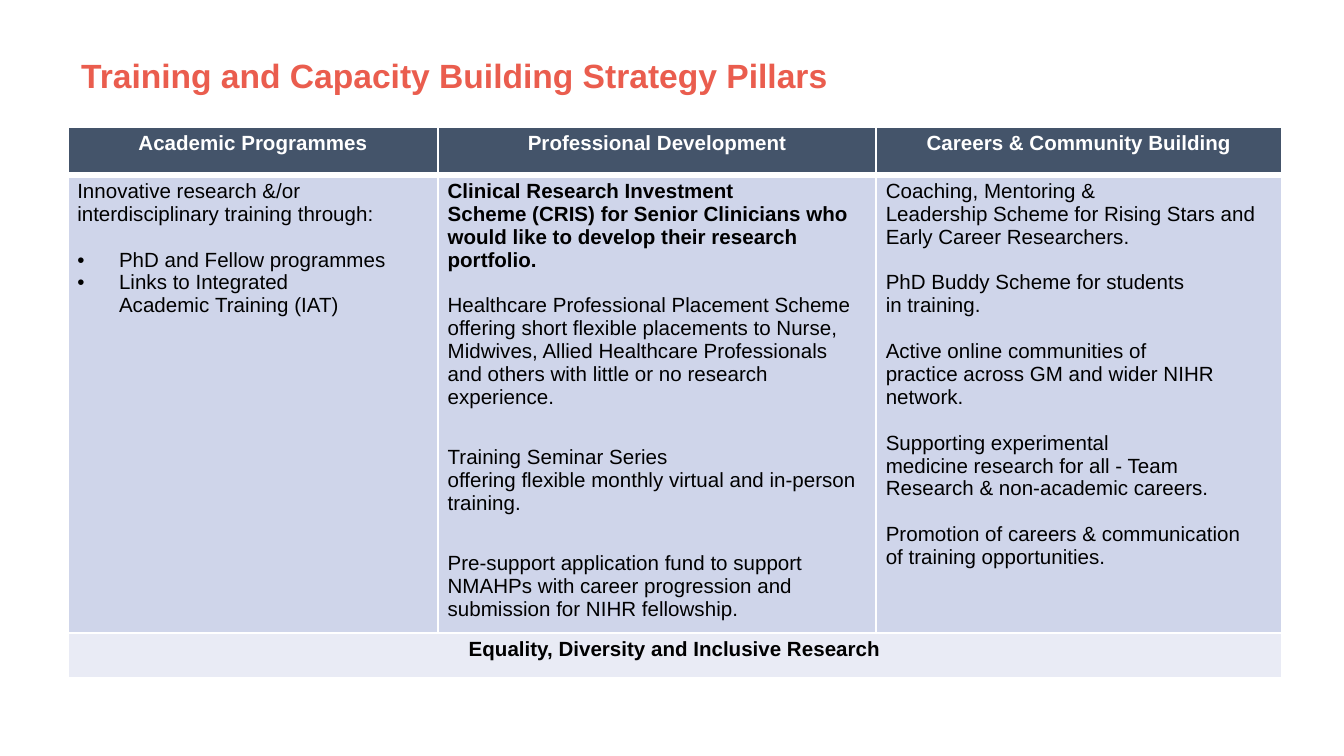
from dataclasses import dataclass

from lxml import etree
from pptx import Presentation
from pptx import util as u
from pptx.dml.color import RGBColor
from pptx.enum import text
from pptx.oxml.ns import qn


@dataclass(frozen=True)
class Theme:
    font: str = "Arial"
    title_size: float = 18
    body_size: float = 11
    title: str = "EA5D4E"
    header: str = "44546A"
    body: str = "CFD5EA"
    footer: str = "E9EBF5"
    light: str = "FFFFFF"
    dark: str = "000000"
    thin: float = 1.11
    thick: float = 3.34
    gap: float = 12.3
    wide_gap: float = 20.1


T = Theme()
HARD_SPACE = chr(160)  # written as ~ in the texts below

HEADERS = ["Academic Programmes", "Professional Development",
           "Careers & Community Building"]
# Each paragraph: text, space before, style
PILLARS = [
    [("Innovative research &/or interdisciplinary~training through:", 0, ""),
     ("PhD and~Fellow programmes", T.gap, "bullet"),
     ("Links to Integrated Academic~Training (IAT)", 0, "bullet")],
    [("Clinical Research Investment Scheme~(CRIS) for Senior Clinicians who "
      "would like~to develop their research portfolio.", 0, "bold"),
     ("Healthcare Professional Placement~Scheme offering short flexible "
      "placements~to Nurse, Midwives, Allied Healthcare~Professionals and "
      "others with little or no~research experience.", T.gap, ""),
     ("Training Seminar Series", T.wide_gap + T.gap * 0, ""),
     ("offering flexible~monthly virtual and in-person training.", 0, ""),
     ("Pre-support application fund to support NMAHPs with career progression "
      "and submission for NIHR fellowship.", T.wide_gap, "")],
    [("Coaching, Mentoring & Leadership~Scheme for Rising Stars and Early "
      "Career~Researchers.", 0, ""),
     ("PhD Buddy Scheme for students in~training.", T.gap, ""),
     ("Active online communities of practice~across GM and wider NIHR "
      "network.", T.gap, ""),
     ("Supporting experimental medicine~research~for all - Team Research & "
      "non-academic~careers.", T.gap, ""),
     ("Promotion of careers & communication of~training opportunities.",
      T.gap, "")],
]
FOOTER = "Equality, Diversity and Inclusive Research"


def style_cell(cell, fill, top, bottom):
    """Set margins, borders (widths in points) and fill."""
    cell.margin_left = cell.margin_right = u.Cm(0.18)
    cell.margin_top = cell.margin_bottom = u.Cm(0.09)
    tc_pr = cell._tc.get_or_add_tcPr()
    for tag, width in (("lnL", T.thin), ("lnR", T.thin),
                       ("lnT", top), ("lnB", bottom)):
        ln = etree.SubElement(tc_pr, qn(f"a:{tag}"), w=str(u.Pt(width)))
        solid = etree.SubElement(ln, qn("a:solidFill"))
        etree.SubElement(solid, qn("a:srgbClr"), val=T.light)
    cell.fill.solid()
    cell.fill.fore_color.rgb = RGBColor.from_string(fill)


def style_text(p, content, color, bold, size=T.body_size):
    p.text = content.replace("~", HARD_SPACE)
    p.font.name = T.font
    p.font.size = u.Pt(size)
    p.font.bold = bold
    p.font.color.rgb = RGBColor.from_string(color)


prs = Presentation()
prs.slide_width, prs.slide_height = u.Cm(25.4), u.Cm(14.29)
s = prs.slides.add_slide(prs.slide_layouts[5])

title = s.shapes.title
title.left, title.top = u.Cm(1.28), u.Cm(0.55)
title.width, title.height = u.Cm(21.9), u.Cm(1.83)
tf = title.text_frame
tf.auto_size = text.MSO_AUTO_SIZE.NONE
tf.vertical_anchor = text.MSO_ANCHOR.MIDDLE
p = tf.paragraphs[0]
style_text(p, "Training and Capacity Building Strategy Pillars",
           T.title, True, T.title_size)
p.alignment = text.PP_ALIGN.LEFT
p.line_spacing = 0.9

widths = [7.0, 8.28, 7.66]
heights = [0.91, 8.66, 0.85]
table = s.shapes.add_table(3, 3, u.Cm(1.28), u.Cm(2.4),
                           u.Cm(sum(widths)), u.Cm(sum(heights))).table
for column, width in zip(table.columns, widths):
    column.width = u.Cm(width)
for row, height in zip(table.rows, heights):
    row.height = u.Cm(height)

for col, (header, pillar) in enumerate(zip(HEADERS, PILLARS)):
    cell = table.cell(0, col)
    style_cell(cell, T.header, T.thin, T.thick)
    p = cell.text_frame.paragraphs[0]
    style_text(p, header, T.light, True)
    p.alignment = text.PP_ALIGN.CENTER

    cell = table.cell(1, col)
    style_cell(cell, T.body, T.thick, T.thin)
    tf = cell.text_frame
    for i, (content, before, style) in enumerate(pillar):
        p = tf.add_paragraph() if i else tf.paragraphs[0]
        if before:
            p.space_before = u.Pt(before)
        if style == "bullet":
            p_pr = p._p.get_or_add_pPr()
            p_pr.set("marL", str(u.Cm(0.79)))
            p_pr.set("indent", str(u.Cm(-0.79)))
            etree.SubElement(p_pr, qn("a:buFont"), typeface=T.font)
            etree.SubElement(p_pr, qn("a:buChar"), char="•")
        style_text(p, content, T.dark, style == "bold")

    style_cell(table.cell(2, col), T.footer, T.thin, T.thin)

footer = table.cell(2, 0)
footer.merge(table.cell(2, 2))
p = footer.text_frame.paragraphs[0]
style_text(p, FOOTER, T.dark, True)
p.alignment = text.PP_ALIGN.CENTER

prs.save("out.pptx")
